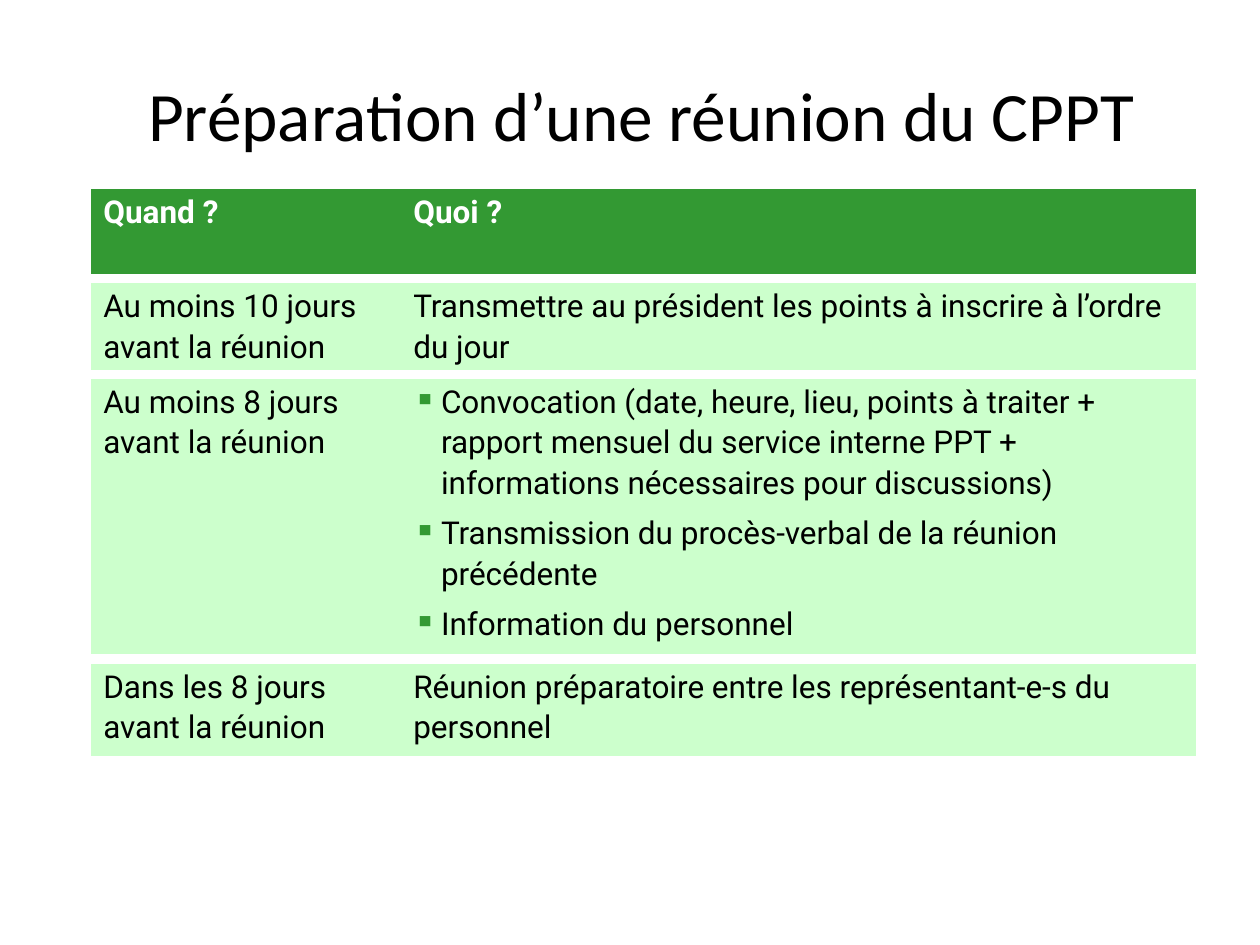
from lxml.etree import SubElement
from pptx import Presentation
from pptx.dml.color import RGBColor
from pptx.enum.text import MSO_ANCHOR, PP_ALIGN
from pptx.oxml.ns import qn
from pptx.util import Inches, Pt

COLORS = {"header": "339933", "body": "CCFFCC", "white": "FFFFFF", "black": "000000"}
COLUMN_WIDTHS = [2.46, 6.31]
ROW_HEIGHTS = [0.75, 0.76, 2.26, 0.81]
ROWS = [
    (["Quand ?"], ["Quoi ?"]),
    (["Au moins 10 jours avant la réunion"],
     ["Transmettre au président les points à inscrire à l’ordre du jour"]),
    (["Au moins 8 jours avant la réunion"],
     ["Convocation (date, heure, lieu, points à traiter + rapport mensuel du service "
      "interne PPT + informations nécessaires pour discussions)",
      "Transmission du procès-verbal de la réunion précédente",
      "Information du personnel"]),
    (["Dans les 8 jours avant la réunion"],
     ["Réunion préparatoire entre les représentant-e-s du personnel"]),
]


def set_borders(cell):
    """Thick white rules above and below, none at the sides."""
    properties = cell._tc.get_or_add_tcPr()
    for side in ("lnL", "lnR"):
        SubElement(SubElement(properties, qn(f"a:{side}"), w="0"), qn("a:noFill"))
    for side in ("lnT", "lnB"):
        line = SubElement(properties, qn(f"a:{side}"), w=str(Pt(6)))
        SubElement(SubElement(line, qn("a:solidFill")), qn("a:srgbClr"), val=COLORS["white"])


def add_bullet(paragraph):
    properties = paragraph._p.get_or_add_pPr()
    properties.set("marL", str(Inches(0.22)))
    properties.set("indent", str(-Inches(0.22)))
    SubElement(SubElement(properties, qn("a:buClr")), qn("a:srgbClr"), val=COLORS["header"])
    SubElement(properties, qn("a:buChar"), char="▪")


prs = Presentation()
prs.slide_width, prs.slide_height = Inches(10), Inches(7.5)
slide = prs.slides.add_slide(prs.slide_layouts[6])

title = slide.shapes.add_textbox(Inches(0.66), Inches(0.36), Inches(8.86), Inches(1.09)).text_frame
title.word_wrap = True
title.vertical_anchor = MSO_ANCHOR.MIDDLE
heading = title.paragraphs[0]
heading.text = "Préparation d’une réunion du CPPT"
heading.alignment = PP_ALIGN.CENTER
heading.font.name, heading.font.size = "Calibri", Pt(39.6)
heading.font.color.rgb = RGBColor.from_string(COLORS["black"])

schedule = slide.shapes.add_table(
    len(ROWS), len(COLUMN_WIDTHS), Inches(0.72), Inches(1.46),
    Inches(sum(COLUMN_WIDTHS)), Inches(sum(ROW_HEIGHTS))).table
for column, width in zip(schedule.columns, COLUMN_WIDTHS):
    column.width = Inches(width)
for row, height in zip(schedule.rows, ROW_HEIGHTS):
    row.height = Inches(height)

for r, row_texts in enumerate(ROWS):
    is_header = r == 0
    for c, lines in enumerate(row_texts):
        cell = schedule.cell(r, c)
        set_borders(cell)
        cell.fill.solid()
        cell.fill.fore_color.rgb = RGBColor.from_string(COLORS["header" if is_header else "body"])
        cell.text = "\n".join(lines)
        for i, paragraph in enumerate(cell.text_frame.paragraphs):
            paragraph.line_spacing = 1.1
            if i:
                paragraph.space_before = Pt(5.4)
            if len(lines) > 1:
                add_bullet(paragraph)
            font = paragraph.font
            font.name, font.size, font.bold = "Roboto", Pt(18), is_header
            font.color.rgb = RGBColor.from_string(COLORS["white" if is_header else "black"])

prs.save("out.pptx")
